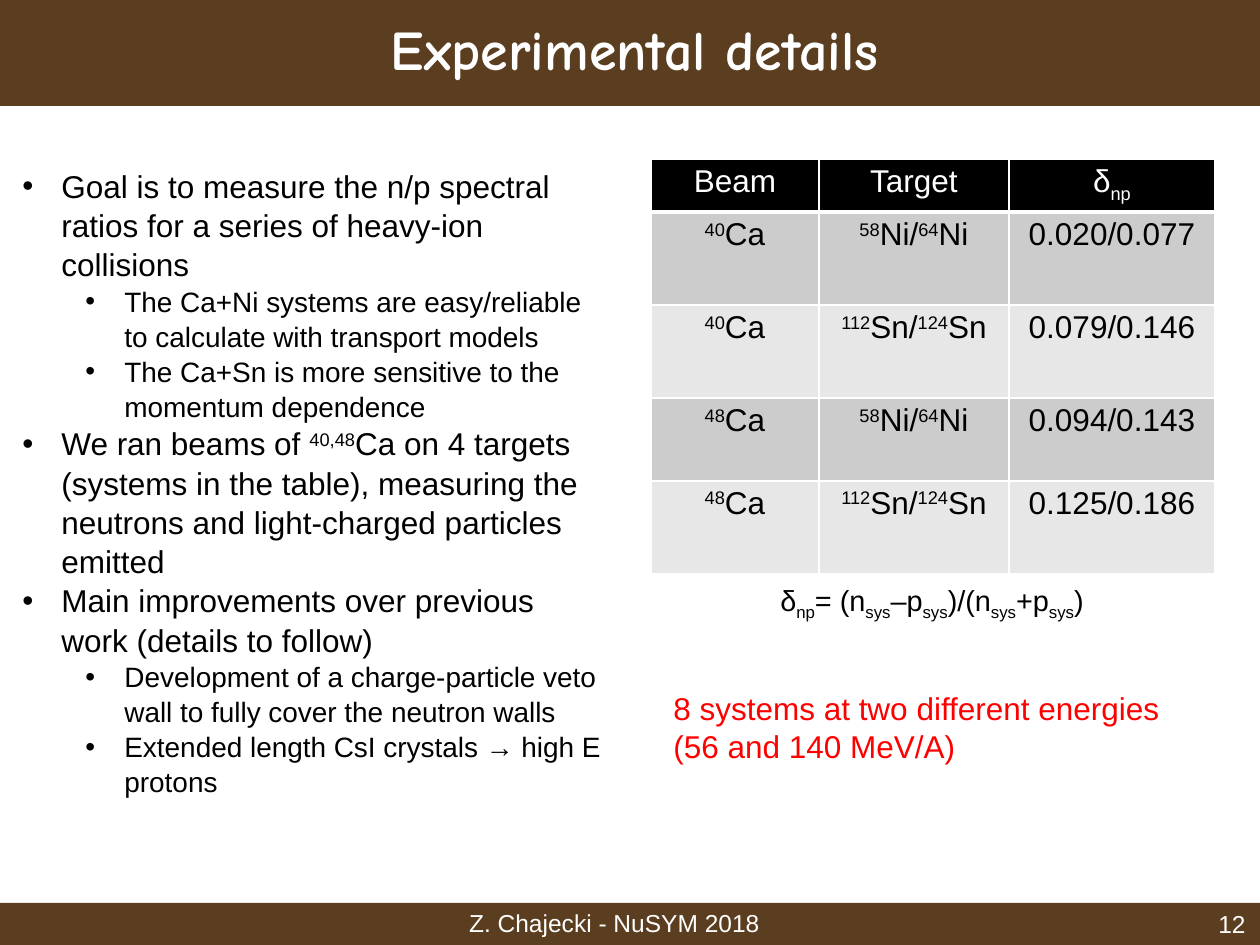
from lxml.etree import SubElement
from pptx import Presentation
from pptx.dml.color import RGBColor
from pptx.enum.shapes import MSO_SHAPE as Preset
from pptx.enum.text import MSO_ANCHOR as Anchor, PP_ALIGN as Align
from pptx.oxml.ns import qn
from pptx.util import Pt

SCALE = 914400 / 126
WIDTH, HEIGHT = 1260, 945
BROWN, WHITE, BLACK, RED = "5B3D1F", "FFFFFF", "000000", "FF0000"
BASELINES = {"^": "30000", "_": "-25000"}

# In all text, "|" parts the runs; a leading ^ raises a run and _ lowers it.
BANDS = [(0, 0, WIDTH, 106), (0, 903, WIDTH, 42)]

# place, text, alignment, anchor, font
LABELS = [
    ((232, 902, 765, 37), "Z. Chajecki - NuSYM 2018", Align.CENTER, Anchor.TOP,
     {"size": 14, "color": WHITE}),
    ((1050, 903, 208, 66), "12", Align.RIGHT, Anchor.TOP,
     {"size": 14, "color": WHITE}),
    ((10, 0, 1250, 96), "Experimental details", Align.CENTER, Anchor.MIDDLE,
     {"size": 32, "color": WHITE, "name": "Comic Neue", "bold": True}),
    ((758, 576, 348, 48),
     "δ|_np|= (n|_sys|–p|_sys|)/(n|_sys|+p|_sys|)", Align.CENTER, Anchor.TOP,
     {"size": 16.5, "color": BLACK}),
    ((661, 683, 553, 89),
     "8 systems at two different energies|\n|(56 and 140 MeV/A)", Align.LEFT,
     Anchor.TOP, {"size": 18, "color": RED}),
]

BULLETS_PLACE = (10, 159, 610, 650)
BULLETS = [
    (0, "Goal is to measure the n/p spectral ratios for a series of "
        "heavy-ion collisions"),
    (1, "The Ca+Ni systems are easy/reliable to calculate with transport models"),
    (1, "The Ca+Sn is more sensitive to the momentum dependence"),
    (0, "We ran beams of |^40,48|Ca on 4 targets (systems in the table), "
        "measuring the neutrons and light-charged particles emitted"),
    (0, "Main improvements over previous work (details to follow)"),
    (1, "Development of a charge-particle veto wall to fully cover the "
        "neutron walls"),
    (1, "Extended length CsI crystals → high E protons"),
]
# size and left margin for each level
LEVELS = [(18, 39), (16, 102)]
HANGING = 39

TABLE_ORIGIN = (651, 159)
COLUMNS = [168, 190, 206]
ROWS = [53, 93, 93, 83, 93]
NICKEL, TIN = "^58|Ni/|^64|Ni", "^112|Sn/|^124|Sn"
CELLS = [
    ("Beam", "Target", "δ|_np"),
    ("^40|Ca", NICKEL, "0.020/0.077"),
    ("^40|Ca", TIN, "0.079/0.146"),
    ("^48|Ca", NICKEL, "0.094/0.143"),
    ("^48|Ca", TIN, "0.125/0.186"),
]
HEADER_FILL, BAND_FILLS = BLACK, ["CCCCCC", "E7E7E7"]
CELL_MARGINS = {"margin_left": 9, "margin_right": 9,
                "margin_top": 5, "margin_bottom": 5}


def px(length):
    return round(length * SCALE)


def rgb(value):
    return RGBColor.from_string(value)


def write(paragraph, text, size, color, name="Arial", bold=False):
    """Fill a paragraph with the runs that the marked-up text describes."""
    for part in text.split("|"):
        if part == "\n":
            paragraph.add_line_break()
            continue
        baseline = BASELINES.get(part[0])
        run = paragraph.add_run()
        run.text = part[1:] if baseline else part
        format_values = {"size": Pt(size), "name": name, "bold": bold}
        for attribute, value in format_values.items():
            setattr(run.font, attribute, value)
        run.font.color.rgb = rgb(color)
        if baseline:
            run.font._element.set("baseline", baseline)


def add_band(slide, place):
    band = slide.shapes.add_shape(Preset.RECTANGLE, *map(px, place))
    band.shadow.inherit = False
    band.fill.solid()
    band.fill.fore_color.rgb = rgb(BROWN)
    band.line.fill.background()


def add_frame(slide, place, anchor=Anchor.TOP):
    frame = slide.shapes.add_textbox(*map(px, place)).text_frame
    frame.word_wrap = True
    frame.vertical_anchor = anchor
    return frame


def add_label(slide, place, text, alignment, anchor, font):
    paragraph = add_frame(slide, place, anchor).paragraphs[0]
    paragraph.alignment = alignment
    write(paragraph, text, **font)


def add_bullets(slide):
    frame = add_frame(slide, BULLETS_PLACE)
    for index, (level, text) in enumerate(BULLETS):
        paragraph = frame.add_paragraph() if index else frame.paragraphs[0]
        size, margin = LEVELS[level]
        paragraph.level = level
        paragraph.line_spacing = 1.04
        properties = paragraph._p.get_or_add_pPr()
        properties.set("marL", str(px(margin)))
        properties.set("indent", str(-px(HANGING)))
        SubElement(properties, qn("a:buFont"), typeface="Arial")
        SubElement(properties, qn("a:buChar"), char="•")
        write(paragraph, text, size, BLACK)


def add_borders(cell, bottom_width):
    """Draw white borders; they must come before the fill in the cell's XML."""
    properties = cell._tc.get_or_add_tcPr()
    for side, width in zip("LRTB", (1, 1, 1, bottom_width)):
        line = SubElement(properties, qn(f"a:ln{side}"), w=str(Pt(width)))
        fill = SubElement(line, qn("a:solidFill"))
        SubElement(fill, qn("a:srgbClr"), val=WHITE)


def add_systems_table(slide):
    table = slide.shapes.add_table(
        len(ROWS), len(COLUMNS), *map(px, TABLE_ORIGIN),
        px(sum(COLUMNS)), px(sum(ROWS))).table
    for column, width in zip(table.columns, COLUMNS):
        column.width = px(width)
    for index, (row, height, texts) in enumerate(zip(table.rows, ROWS, CELLS)):
        row.height = px(height)
        header = index == 0
        fill = HEADER_FILL if header else BAND_FILLS[(index - 1) % 2]
        for cell, text in zip(row.cells, texts):
            for attribute, margin in CELL_MARGINS.items():
                setattr(cell, attribute, px(margin))
            add_borders(cell, 3 if header else 1)
            cell.fill.solid()
            cell.fill.fore_color.rgb = rgb(fill)
            paragraph = cell.text_frame.paragraphs[0]
            paragraph.alignment = Align.CENTER
            write(paragraph, text, 18, WHITE if header else BLACK)


def main():
    presentation = Presentation()
    presentation.slide_width = px(WIDTH)
    presentation.slide_height = px(HEIGHT)
    slide = presentation.slides.add_slide(presentation.slide_layouts[6])
    for place in BANDS:
        add_band(slide, place)
    for label in LABELS:
        add_label(slide, *label)
    add_systems_table(slide)
    add_bullets(slide)
    presentation.save("out.pptx")


if __name__ == "__main__":
    main()
